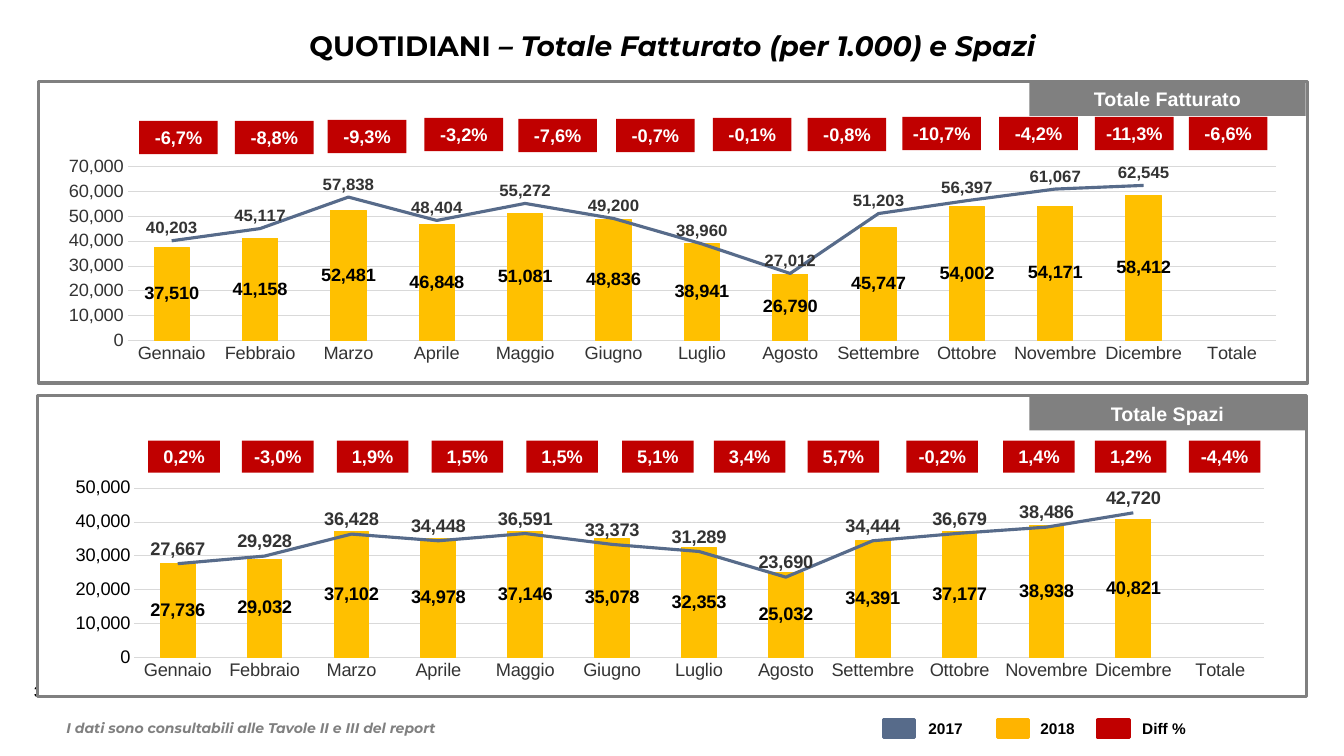
from dataclasses import dataclass

from lxml import etree
from pptx import Presentation
from pptx.chart.data import CategoryChartData
from pptx.dml.color import RGBColor
from pptx.enum.chart import (XL_CHART_TYPE, XL_LABEL_POSITION, XL_MARKER_STYLE,
                             XL_TICK_MARK)
from pptx.enum.shapes import MSO_SHAPE
from pptx.enum.text import MSO_ANCHOR, PP_ALIGN
from pptx.oxml.ns import qn
from pptx.oxml.xmlchemy import OxmlElement
from pptx.util import Inches, Pt

RECT = MSO_SHAPE.RECTANGLE
LEFT, CENTER = PP_ALIGN.LEFT, PP_ALIGN.CENTER
MIDDLE = MSO_ANCHOR.MIDDLE
COLUMN = XL_CHART_TYPE.COLUMN_CLUSTERED
INSIDE, ABOVE = XL_LABEL_POSITION.CENTER, XL_LABEL_POSITION.ABOVE
NO_TICK, NO_MARK = XL_TICK_MARK.NONE, XL_MARKER_STYLE.NONE


@dataclass(frozen=True)
class Theme:
    """Colours, fonts and type sizes of the slide."""
    black: str = "000000"
    white: str = "FFFFFF"
    gray: str = "808080"
    dark: str = "333333"
    grid: str = "D9D9D9"
    red: str = "C00000"
    blue: str = "576B8A"
    gold: str = "FFC000"
    amber: str = "FFB400"
    body: str = "Arial"
    head: str = "Montserrat"
    title: int = 20
    tab: int = 14
    value: int = 13
    label: int = 12
    key: int = 11
    note: int = 10


T = Theme()
MONTHS = ["Gennaio", "Febbraio", "Marzo", "Aprile", "Maggio", "Giugno", "Luglio",
          "Agosto", "Settembre", "Ottobre", "Novembre", "Dicembre", "Totale"]
SALES = dict(
    name="Totale Fatturato", frame=(0.38, 0.81, 12.59, 2.99), tab=0.81,
    badge=(0.78, 0.33),
    lefts=[1.38, 2.33, 3.25, 4.21, 5.14, 6.11, 7.07, 8.01, 8.95, 9.91, 10.86, 11.79],
    tops=[1.2, 1.2, 1.19, 1.17, 1.18, 1.18, 1.17, 1.17, 1.16, 1.16, 1.16, 1.16],
    diffs=["-6,7%", "-8,8%", "-9,3%", "-3,2%", "-7,6%", "-0,7%",
           "-0,1%", "-0,8%", "-10,7%", "-4,2%", "-11,3%", "-6,6%"],
    box=(0.53, 1.56, 12.25, 2.18), plot=(0.06, 0.02, 0.93, 0.81), top=70000,
    scale=T.dark, label=T.label,
    bars=[37510, 41158, 52481, 46848, 51081, 48836,
          38941, 26790, 45747, 54002, 54171, 58412],
    line=[40203, 45117, 57838, 48404, 55272, 49200,
          38960, 27012, 51203, 56397, 61067, 62545])
SPACE = dict(
    name="Totale Spazi", frame=(0.37, 3.92, 12.59, 2.99), tab=3.93,
    badge=(0.71, 0.32),
    lefts=[1.47, 2.4, 3.34, 4.28, 5.22, 6.17, 7.08, 8.01, 8.99, 9.95, 10.86, 11.79],
    tops=[4.37] * 12,
    diffs=["0,2%", "-3,0%", "1,9%", "1,5%", "1,5%", "5,1%",
           "3,4%", "5,7%", "-0,2%", "1,4%", "1,2%", "-4,4%"],
    box=(0.47, 4.72, 12.31, 2.07), plot=(0.07, 0.06, 0.91, 0.81), top=50000,
    scale=T.black, label=T.value,
    bars=[27736, 29032, 37102, 34978, 37146, 35078,
          32353, 25032, 34391, 37177, 38938, 40821],
    line=[27667, 29928, 36428, 34448, 36591, 33373,
          31289, 23690, 34444, 36679, 38486, 42720])
KEYS = [("2017", T.blue, 8.76, 9.11), ("2018", T.amber, 9.89, 10.22),
        ("Diff %", T.red, 10.89, 11.23)]


def style(font, size, color, face=T.body, bold=False, italic=False):
    """Set the look of a font."""
    font.size, font.name, font.bold, font.italic = Pt(size), face, bold, italic
    font.color.rgb = RGBColor.from_string(color)


def write(shape, text, align=LEFT, **look):
    """Add a run of text to the first paragraph of a shape."""
    para = shape.text_frame.paragraphs[0]
    para.alignment = align
    run = para.add_run()
    run.text = text
    style(run.font, **look)


def place(at):
    """Turn a box in inches into lengths."""
    return [Inches(n) for n in at]


def area(slide, at, wrap=True):
    """Add an empty text box."""
    box = slide.shapes.add_textbox(*place(at))
    box.text_frame.word_wrap = wrap
    box.text_frame.vertical_anchor = MIDDLE
    return box


def block(slide, at, fill, line=None):
    """Add a flat rectangle."""
    shape = slide.shapes.add_shape(RECT, *place(at))
    shape.shadow.inherit = False
    shape.fill.solid()
    shape.fill.fore_color.rgb = RGBColor.from_string(fill)
    if line:
        stroke(shape.line, line, 2.25)
    else:
        shape.line.fill.background()
    frame = shape.text_frame
    frame.vertical_anchor = MIDDLE
    frame.margin_left = frame.margin_right = 0
    frame.margin_top = frame.margin_bottom = 0
    return shape


def stroke(line, color, width):
    """Set the colour and width of a line."""
    line.color.rgb = RGBColor.from_string(color)
    line.width = Pt(width)


def child(parent, tag, val=None):
    """Add a chart element with an optional value."""
    node = etree.SubElement(parent, qn("c:" + tag))
    if val is not None:
        node.set("val", str(val))
    return node


def combine(chart):
    """Move the second series into a line plot on the same axes."""
    bar = chart.plots[0]._element
    line = OxmlElement("c:lineChart")
    bar.addnext(line)
    child(line, "grouping", "standard")
    child(line, "varyColors", 0)
    ser = bar.findall(qn("c:ser"))[1]
    for flag in ser.findall(qn("c:invertIfNegative")):
        ser.remove(flag)
    line.append(ser)
    child(line, "marker", 1)
    for axis in bar.findall(qn("c:axId")):
        child(line, "axId", axis.get("val"))


def arrange(chart, plot):
    """Fix the inner plot area as shares of the chart."""
    root = chart.plots[0]._element.getparent()
    for old in root.findall(qn("c:layout")):
        root.remove(old)
    outer = OxmlElement("c:layout")
    root.insert(0, outer)
    inner = child(outer, "manualLayout")
    child(inner, "layoutTarget", "inner")
    child(inner, "xMode", "edge")
    child(inner, "yMode", "edge")
    for tag, share in zip("xywh", plot):
        child(inner, tag, share)


def tag(series, spot, size, color):
    """Show the values of a series."""
    labels = series.data_labels
    labels.show_value = True
    labels.position = spot
    labels.number_format, labels.number_format_is_linked = "#,##0", False
    style(labels.font, size, color, bold=True)


def graph(slide, part):
    """Add a chart of columns for 2018 and a line for 2017."""
    data = CategoryChartData(number_format="#,##0")
    data.categories = MONTHS
    data.add_series("2018", part["bars"] + [None])
    data.add_series("2017", part["line"] + [None])
    chart = slide.shapes.add_chart(COLUMN, *place(part["box"]), data).chart
    chart.has_legend = chart.has_title = False
    style(chart.font, T.value, T.black)
    combine(chart)
    arrange(chart, part["plot"])
    bars, lines = chart.plots
    bars.gap_width, bars.vary_by_categories = 150, False
    first, second = bars.series[0], lines.series[0]
    first.format.fill.solid()
    first.format.fill.fore_color.rgb = RGBColor.from_string(T.gold)
    stroke(first.format.line, T.gold, 0.75)
    stroke(second.format.line, T.blue, 2.25)
    second.smooth = False
    second.marker.style = NO_MARK
    tag(first, INSIDE, T.value, T.black)
    tag(second, ABOVE, part["label"], T.dark)
    cats, vals = chart.category_axis, chart.value_axis
    for axis, color in ((cats, T.dark), (vals, part["scale"])):
        axis.major_tick_mark = axis.minor_tick_mark = NO_TICK
        style(axis.tick_labels.font, T.value, color)
    stroke(cats.format.line, T.grid, 0.75)
    vals.format.line.fill.background()
    stroke(vals.major_gridlines.format.line, T.grid, 0.75)
    vals.minimum_scale, vals.maximum_scale, vals.major_unit = 0, part["top"], 10000
    vals.tick_labels.number_format = "#,##0"
    vals.tick_labels.number_format_is_linked = False


def panel(slide, part):
    """Add a framed panel with its tab, badges and chart."""
    block(slide, part["frame"], T.white, T.gray)
    head = block(slide, (10.21, part["tab"], 2.74, 0.34), T.gray)
    write(head, part["name"], CENTER, size=T.tab, color=T.white, bold=True)
    for left, top, diff in zip(part["lefts"], part["tops"], part["diffs"]):
        badge = block(slide, (left, top, *part["badge"]), T.red)
        write(badge, diff, CENTER, size=T.value, color=T.white, bold=True)
    graph(slide, part)


def main():
    """Build and save the slide."""
    deck = Presentation()
    deck.slide_width, deck.slide_height = Inches(13.33), Inches(7.5)
    slide = deck.slides.add_slide(deck.slide_layouts[6])
    small = dict(size=T.key, color=T.black, bold=True)
    write(area(slide, (0.24, 6.71, 0.42, 0.29), wrap=False), "3", **small)
    title = area(slide, (1.67, 0.23, 10, 0.44))
    look = dict(size=T.title, color=T.black, face=T.head, bold=True)
    write(title, "QUOTIDIANI ", CENTER, **look)
    write(title, "– Totale Fatturato (per 1.000) e Spazi", CENTER, italic=True, **look)
    for part in (SALES, SPACE):
        panel(slide, part)
    for name, color, left, start in KEYS:
        block(slide, (left, 7.14, 0.31, 0.18), color, color)
        write(area(slide, (start, 7.08, 0.71, 0.29)), name, **small)
    write(area(slide, (0.56, 7.09, 5.01, 0.27)),
          "I dati sono consultabili alle Tavole II e III del report",
          size=T.note, color=T.gray, face=T.head, bold=True, italic=True)
    deck.save("out.pptx")


if __name__ == "__main__":
    main()
